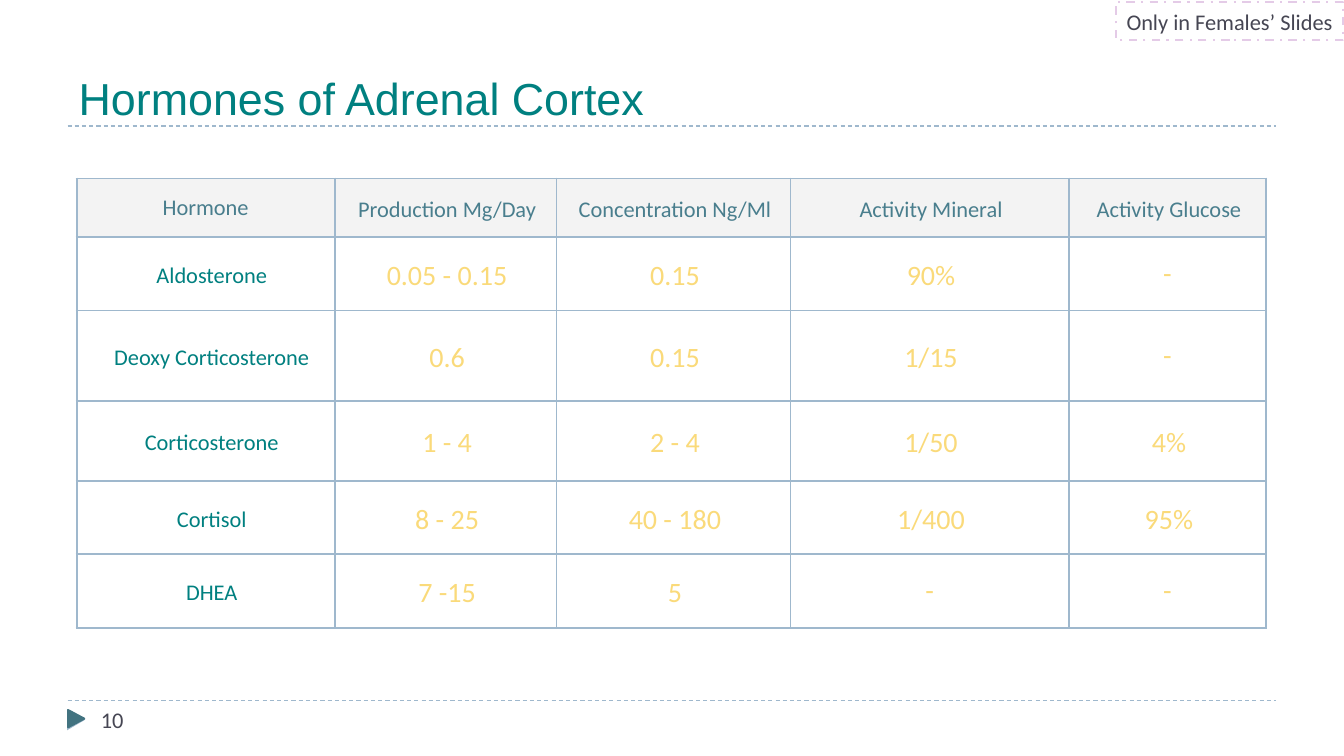
"""Builds the slide on the hormones of the adrenal cortex."""
from lxml import etree
from pptx import Presentation
from pptx import util as u
from pptx.dml import color
from pptx.enum import dml, shapes, text
from pptx.oxml import ns

COLOURS = {
    "rule": "9FB8CD", "teal": "008080", "ink": "464653", "heading": "497E8D",
    "header": "F3F3F3", "value": "FADA7A", "badge": "E4CBE7", "marker": "427380",
}
HEADINGS = ["Hormone", "Production Mg/Day", "Concentration Ng/Ml", "Activity Mineral", "Activity Glucose"]
HORMONES = [
    ["Aldosterone", "0.05 - 0.15", "0.15", "90%", "-"],
    ["Deoxy Corticosterone", "0.6", "0.15", "1/15", "-"],
    ["Corticosterone", "1 - 4", "2 - 4", "1/50", "4%"],
    ["Cortisol", "8 - 25", "40 - 180", "1/400", "95%"],
    ["DHEA", "7 -15", "5", "-", "-"],
]
COLUMN_WIDTHS = [256, 220, 232, 276, 196]
ROW_HEIGHTS = [58, 73, 90, 79, 73, 73]


def px(length):
    """Turn px, a hundred to the inch, into EMU."""
    return u.Emu(length * 9144)


def rgb(name):
    """Look up a named colour."""
    return color.RGBColor.from_string(COLOURS[name])


def assign(target, **values):
    """Set attributes from a dict of format values."""
    for name, value in values.items():
        setattr(target, name, value)


class Painter:
    """Draws elements in one style on the current slide."""

    def __init__(self, page):
        self.page = page
        self.font = "Calibri"

    def add_words(self, frame, words, size, colour, align=text.PP_ALIGN.LEFT, font=None):
        """Fill a text frame with one formatted paragraph and return it."""
        para = frame.paragraphs[0]
        para.alignment = align
        span = para.add_run()
        span.text = words
        assign(span.font, name=font or self.font, size=u.Pt(size))
        span.font.color.rgb = rgb(colour)
        return para

    def stroke(self, line, colour, width, dash=None):
        """Format a line or an outline."""
        line.color.rgb = rgb(colour)
        assign(line, width=u.Pt(width), dash_style=dash)

    def label(self, place, words, size, colour, anchor=text.MSO_ANCHOR.TOP, font=None):
        """Add a text box."""
        frame = self.page.shapes.add_textbox(*map(px, place)).text_frame
        assign(frame, word_wrap=True, vertical_anchor=anchor, margin_left=px(11),
               margin_right=px(11), margin_top=px(6), margin_bottom=px(6))
        self.add_words(frame, words, size, colour, font=font)

    def rule(self, left, right, height):
        """Add a dashed horizontal line."""
        line = self.page.shapes.add_connector(
            shapes.MSO_CONNECTOR.STRAIGHT, px(left), px(height), px(right), px(height))
        self.stroke(line.line, "rule", 0.75, dml.MSO_LINE.DASH)
        etree.SubElement(line._element.spPr, ns.qn("a:effectLst"))

    def triangle(self, place, colour, outlined):
        """Add a triangle that points right."""
        shape = self.page.shapes.add_shape(shapes.MSO_SHAPE.ISOSCELES_TRIANGLE, *map(px, place))
        shape.rotation = 90
        shape.shadow.inherit = False
        shape.fill.solid()
        shape.fill.fore_color.rgb = rgb(colour)
        if outlined:
            self.stroke(shape.line, colour, 1.5)
        else:
            shape.line.fill.background()

    def badge(self, place, words):
        """Add a framed note."""
        box = self.page.shapes.add_shape(shapes.MSO_SHAPE.RECTANGLE, *map(px, place))
        box.shadow.inherit = False
        box.fill.background()
        self.stroke(box.line, "badge", 1.5, dml.MSO_LINE.DASH_DOT)
        box.text_frame.vertical_anchor = text.MSO_ANCHOR.MIDDLE
        self.add_words(box.text_frame, words, 16, "ink", text.PP_ALIGN.CENTER)

    def border(self, cell):
        """Draw all four borders of a table cell."""
        props = cell._tc.get_or_add_tcPr()
        for index, side in enumerate(("a:lnL", "a:lnR", "a:lnT", "a:lnB")):
            edge = etree.Element(ns.qn(side), w=str(u.Pt(1.5)))
            fill = etree.SubElement(edge, ns.qn("a:solidFill"))
            etree.SubElement(fill, ns.qn("a:srgbClr"), val=COLOURS["rule"])
            props.insert(index, edge)

    def cell(self, cell, words, row, column):
        """Fill and format one table cell."""
        plain = words in ("-", "Hormone")
        assign(cell, vertical_anchor=text.MSO_ANCHOR.MIDDLE, margin_left=0, margin_right=0,
               margin_top=px(0 if plain else 4), margin_bottom=0)
        if row == 0:
            size, colour = 16, "heading"
            cell.fill.solid()
            cell.fill.fore_color.rgb = rgb("header")
        else:
            size, colour = (20, "value") if column else (16, "teal")
            cell.fill.background()
        self.border(cell)
        para = self.add_words(cell.text_frame, words, size, colour, text.PP_ALIGN.CENTER)
        if not plain:
            para.space_before = u.Pt(3)
            props = para._p.get_or_add_pPr()
            props.set("marL", str(px(3 if column else 12)))
            props.set("indent", "0")

    def table(self, left, top, rows):
        """Add the table of hormones."""
        table = self.page.shapes.add_table(
            len(rows), len(rows[0]), px(left), px(top),
            px(sum(COLUMN_WIDTHS)), px(sum(ROW_HEIGHTS))).table
        assign(table, first_row=False, horz_banding=False)
        for column, width in zip(table.columns, COLUMN_WIDTHS):
            column.width = px(width)
        for row, height in zip(table.rows, ROW_HEIGHTS):
            row.height = px(height)
        for row, entries in enumerate(rows):
            for column, words in enumerate(entries):
                self.cell(table.cell(row, column), words, row, column)


def main():
    """Build and save the deck."""
    deck = Presentation()
    assign(deck, slide_width=px(1333), slide_height=px(750))
    painter = Painter(deck.slides.add_slide(deck.slide_layouts[6]))
    for height in (695, 125):
        painter.rule(67, 1266, height)
    painter.triangle((65, 705, 21, 18), "rule", False)
    painter.label((67, 29, 1200, 100), "Hormones of Adrenal Cortex", 32, "teal",
                  text.MSO_ANCHOR.BOTTOM, "Arial")
    painter.label((89, 695, 289, 40), "10", 16, "ink")
    painter.table(76, 177, [HEADINGS, *HORMONES])
    painter.badge((1107, 2, 225, 38), "Only in Females’ Slides")
    painter.triangle((67, 705, 17, 16), "marker", True)
    deck.save("out.pptx")


if __name__ == "__main__":
    main()
